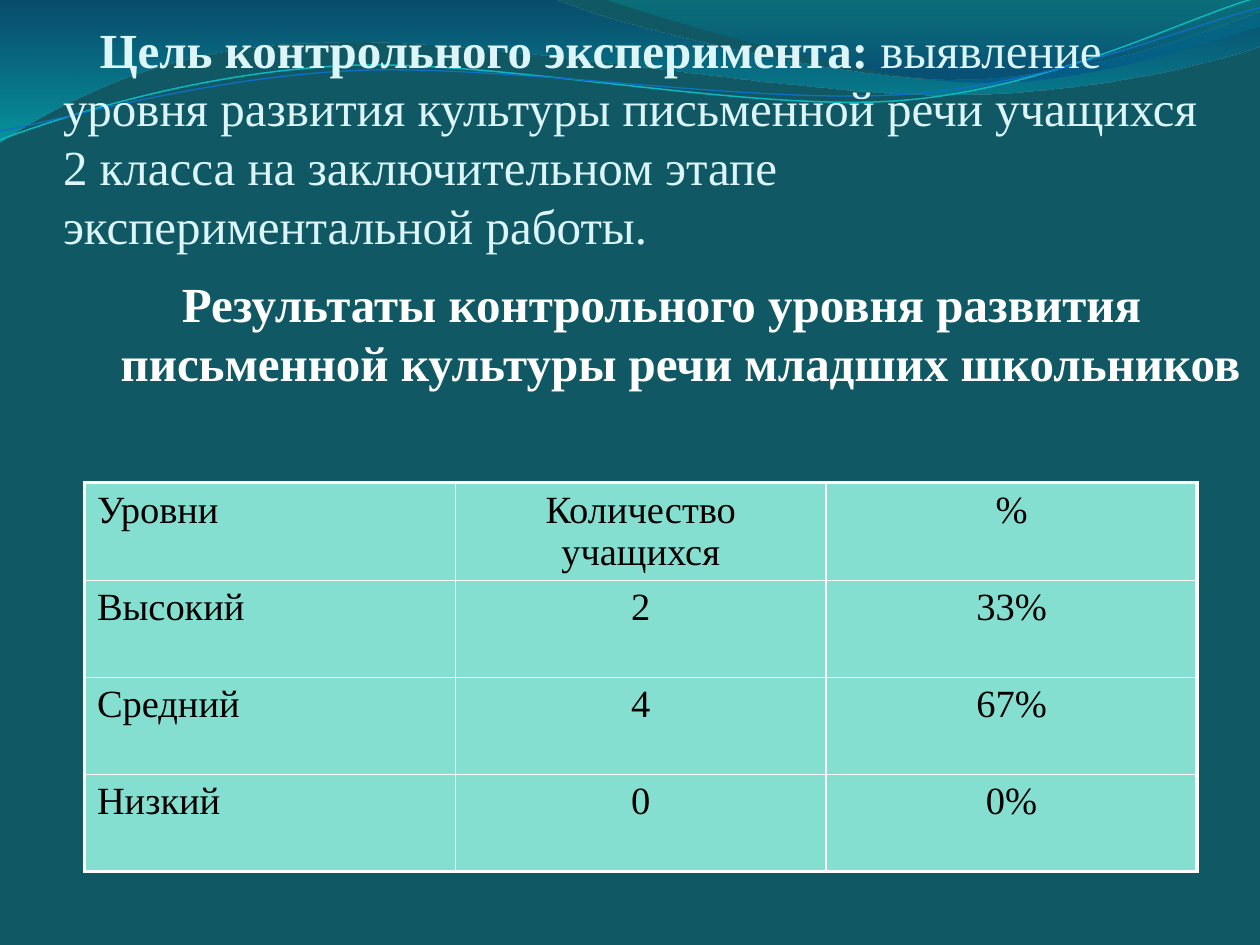
from lxml import etree
from pptx import Presentation
from pptx.dml.color import RGBColor
from pptx.enum.text import MSO_ANCHOR, MSO_AUTO_SIZE, PP_ALIGN
from pptx.oxml.ns import qn
from pptx.util import Inches, Pt

LEFT, CENTER = PP_ALIGN.LEFT, PP_ALIGN.CENTER
BOTTOM = MSO_ANCHOR.BOTTOM
NO_FIT = MSO_AUTO_SIZE.NONE

BACKDROP = RGBColor(0x10, 0x59, 0x64)
TITLE_INK = RGBColor(0xDB, 0xF5, 0xF9)
WHITE = RGBColor(0xFF, 0xFF, 0xFF)
BLACK = RGBColor(0x00, 0x00, 0x00)
MINT = RGBColor(0x85, 0xDF, 0xD0)
NAVY = RGBColor(0x00, 0x3E, 0x76)
CYAN = RGBColor(0x00, 0xC6, 0xCF)
TEAL = RGBColor(0x00, 0xA1, 0xA9)
BLUE = RGBColor(0x00, 0x4A, 0x8C)
AQUA_LINE = RGBColor(0x0A, 0xB8, 0xBF)
BLUE_LINE = RGBColor(0x0F, 0x6F, 0xC6)

LEFT_WAVE = [[(0, -0.01)], [(4.4, -0.01)],
             [(4.76, 0.17), (6.64, 0.63), (7.58, 0.63)],
             [(8.53, 0.63), (9.58, 0.26), (10, 0.09)], [(10.01, 0.36)],
             [(9.83, 0.44), (8.7, 0.76), (7.46, 0.75)],
             [(6.22, 0.75), (3.82, 0.28), (2.57, 0.34)],
             [(1.29, 0.35), (0.46, 0.83), (-0.01, 1.13)], [(0, -0.01)]]
RIGHT_WAVE = [[(4.79, -0.01)], [(5.09, 0.11), (6.82, 0.62), (7.69, 0.65)],
              [(8.56, 0.69), (9.61, 0.32), (10, 0.21)], [(10, 0)], [(4.79, -0.01)]]
AQUA_CURVE = [[(0, 1.11)], [(0.48, 0.93), (1.58, 0.57), (2.77, 0.52)],
              [(3.95, 0.47), (5.93, 0.89), (7.13, 0.8)],
              [(8.33, 0.71), (9.38, 0.15), (9.98, -0.02)]]
BLUE_CURVE = [[(0, 1.04)], [(0.47, 0.96), (1.64, 0.61), (2.83, 0.56)],
              [(4.03, 0.51), (5.97, 0.83), (7.17, 0.75)],
              [(8.36, 0.67), (9.41, 0.21), (10, 0.06)]]
LEVELS = [("Уровни", "Количество учащихся", "%"),
          ("Высокий", "2", "33%"),
          ("Средний", "4", "67%"),
          ("Низкий", "0", "0%")]


class Deck:
    font = "Times New Roman"

    def __init__(self, prs):
        self.w, self.h = prs.slide_width, prs.slide_height
        self.s = prs.slides.add_slide(prs.slide_layouts[1])
        self.s.background.fill.solid()
        self.s.background.fill.fore_color.rgb = BACKDROP

    def place(self, sp, x, y, w, h):
        sp.left, sp.top = round(x * self.w), round(y * self.h)
        sp.width, sp.height = round(w * self.w), round(h * self.h)

    def style(self, p, size, color, align):
        p.alignment = align
        p.font.name, p.font.size = self.font, Pt(size)
        p.font.color.rgb = color

    def curve(self, outline, closed=False):
        points = [(round(x * 100), round(y * 100)) for part in outline for x, y in part]
        builder = self.s.shapes.build_freeform(*points[0], scale=Inches(0.01))
        builder.add_line_segments(points[1:], close=closed)
        sp = builder.convert_to_shape()
        sp.shadow.inherit = False
        lines = iter(list(sp._element.iter(qn("a:lnTo"))))
        for part in outline[1:]:
            steps = [next(lines) for _ in part]
            if len(part) == 3:
                bend = etree.Element(qn("a:cubicBezTo"))
                steps[0].addprevious(bend)
                for step in steps:
                    bend.append(step[0])
                    step.getparent().remove(step)
        return sp

    def wave(self, outline, stops):
        sp = self.curve(outline, closed=True)
        sp.line.fill.background()
        sp.fill.gradient()
        sp.fill.gradient_angle = 270
        gs_list = sp._element.spPr.find(qn("a:gradFill")).find(qn("a:gsLst"))
        for stop, gs, (position, color, alpha) in zip(sp.fill.gradient_stops, gs_list, stops):
            stop.position = position
            stop.color.rgb = color
            etree.SubElement(gs[0], qn("a:alpha"), val=str(alpha * 1000))

    def strand(self, outline, color, width):
        sp = self.curve(outline)
        sp.fill.background()
        sp.line.color.rgb, sp.line.width = color, Pt(width)

    def title(self, lead, rest, box):
        sp = self.s.shapes.title
        self.place(sp, *box)
        tf = sp.text_frame
        tf.auto_size, tf.vertical_anchor = NO_FIT, BOTTOM
        tf.margin_left = tf.margin_right = tf.margin_bottom = 0
        tf.margin_top = Inches(0.05)
        p = tf.paragraphs[0]
        self.style(p, 28, TITLE_INK, LEFT)
        p._p.get_or_add_pPr().set("indent", str(Inches(0.29)))
        for text, bold in ((lead, True), (rest, False)):
            r = p.add_run()
            r.text, r.font.bold = text, bold

    def body(self, text, box):
        sp = self.s.placeholders[1]
        self.place(sp, *box)
        tf = sp.text_frame
        tf.auto_size = NO_FIT
        tf.text = text
        p = tf.paragraphs[0]
        self.style(p, 28, WHITE, CENTER)
        p.font.bold = True
        p.space_before = Pt(5)
        pPr = p._p.get_or_add_pPr()
        pPr.set("marL", str(Inches(0.3)))
        pPr.set("indent", str(Inches(-0.3)))
        pPr.insert_element_before(etree.Element(qn("a:buNone")), "a:tabLst", "a:defRPr")

    def borders(self, cell, widths):
        tcPr = cell._tc.get_or_add_tcPr()
        for i, (side, width) in enumerate(widths.items()):
            ln = etree.Element(qn("a:" + side), w=str(Pt(width)))
            fill = etree.SubElement(ln, qn("a:solidFill"))
            etree.SubElement(fill, qn("a:srgbClr"), val=str(WHITE))
            tcPr.insert(i, ln)

    def table(self, rows, box):
        x, y, w, h = box
        last_row, last_col = len(rows) - 1, len(rows[0]) - 1
        frame = self.s.shapes.add_table(
            len(rows), len(rows[0]), round(x * self.w), round(y * self.h),
            round(w * self.w), round(h * self.h))
        for i, row in enumerate(rows):
            for j, text in enumerate(row):
                cell = frame.table.cell(i, j)
                cell.fill.solid()
                cell.fill.fore_color.rgb = MINT
                cell.text = text
                p = cell.text_frame.paragraphs[0]
                self.style(p, 22, BLACK, CENTER if j else LEFT)
                p.font.bold = False
                p.space_before = Pt(4.4)
                edges = {"lnL": j == 0, "lnR": j == last_col,
                         "lnT": i == 0, "lnB": i == last_row}
                self.borders(cell, {side: 2.25 if outer else 1
                                    for side, outer in edges.items()})


def main():
    prs = Presentation()
    prs.slide_width, prs.slide_height = Inches(10), Inches(7.5)
    deck = Deck(prs)
    deck.wave(LEFT_WAVE, [(0, NAVY, 45), (1, CYAN, 55)])
    deck.wave(RIGHT_WAVE, [(0, TEAL, 30), (0.8, BLUE, 45)])
    deck.strand(AQUA_CURVE, AQUA_LINE, 0.85)
    deck.strand(BLUE_CURVE, BLUE_LINE, 0.75)
    tree = deck.s.shapes._spTree
    for sp in list(deck.s.placeholders):
        tree.append(sp._element)
    deck.title("Цель контрольного эксперимента:",
               " выявление уровня развития культуры письменной речи учащихся "
               "2 класса на заключительном этапе экспериментальной работы.",
               (0.05, 0.77 / 7.5, 0.9, 1.25 / 7.5))
    deck.body("Результаты контрольного уровня развития письменной культуры "
              "речи младших школьников", (0.05, 2.12 / 7.5, 0.95, 0.64))
    deck.table(LEVELS, (0.067, 3.83 / 7.5, 0.883, 3.08 / 7.5))
    prs.save("out.pptx")


if __name__ == "__main__":
    main()
